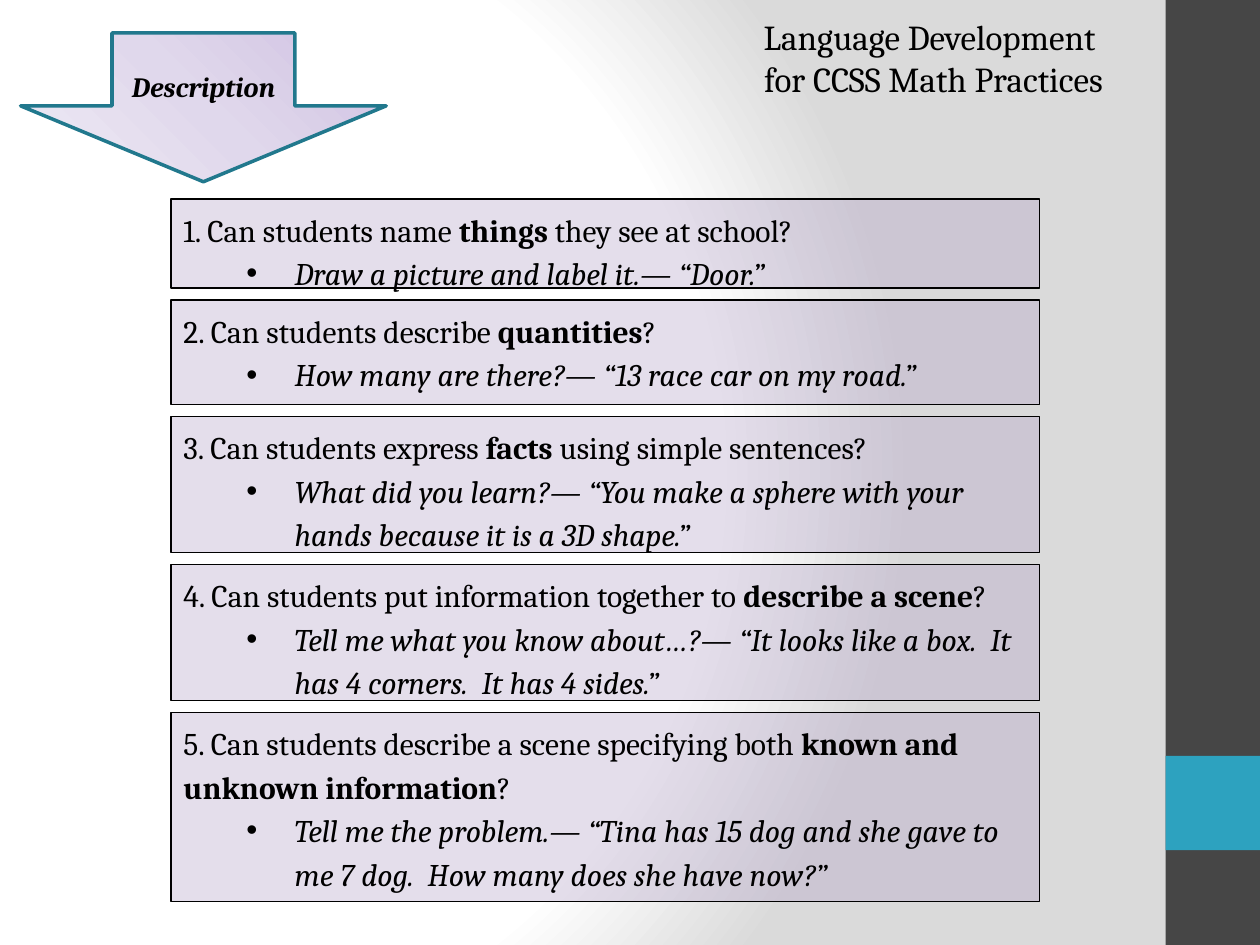
from dataclasses import dataclass

import lxml.etree
import pptx
import pptx.dml.color
import pptx.enum.shapes
import pptx.enum.text
import pptx.oxml
import pptx.oxml.ns
import pptx.util

Cm, Pt = pptx.util.Cm, pptx.util.Pt
Shape = pptx.enum.shapes.MSO_SHAPE
Align = pptx.enum.text.PP_ALIGN
qn = pptx.oxml.ns.qn


@dataclass(frozen=True)
class Theme:
    font: str = "Cambria"
    title_size: int = 20
    body_size: int = 18
    label_size: int = 16
    line_spacing: float = 1.15
    text: str = "000000"
    bar: str = "464646"
    accent: str = "2DA2BF"
    box_fill: str = "B2A1C7"
    box_opacity: int = 34
    arrow_line: str = "21788D"
    arrow_stops: tuple = ((0, "D0C1E2"), (50, "E0D8EC"), (100, "EFEBF5"))
    background_stops: tuple = ((0, "FFFFFF"), (75, "FFFFFF"), (100, "DADADA"))


# Each question: lead, bold key words, rest, example, box height in cm
QUESTIONS = [
    ("1. Can students name ", "things", " they see at school?",
     "Draw a picture and label it.— “Door.”", 1.8),
    ("2. Can students describe ", "quantities", "?",
     "How many are there?— “13 race car on my road.”", 2.11),
    ("3. Can students express ", "facts ", "using simple sentences?",
     "What did you learn?— “You make a sphere with your hands "
     "because it is a 3D shape.”", 2.74),
    ("4. Can students put information together to ", "describe a scene", "?",
     "Tell me what you know about…?— “It looks like a box.  "
     "It has 4 corners.  It has 4 sides.”", 2.74),
    ("5. Can students describe a scene specifying both ",
     "known and unknown information", "?",
     "Tell me the problem.— “Tina has 15 dog and she gave to me 7 dog.  "
     "How many does she have now?”", 3.81),
]
BOX_LEFT, BOX_TOP, BOX_WIDTH, BOX_GAP = 3.45, 4.01, 17.5, 0.24


def rgb(color):
    return pptx.dml.color.RGBColor.from_string(color)


def gradient(stops, direction):
    """Return a gradient fill element; direction is its a:lin or a:path XML."""
    marks = "".join(f'<a:gs pos="{position * 1000}"><a:srgbClr val="{color}"/></a:gs>'
                    for position, color in stops)
    return pptx.oxml.parse_xml(
        f'<a:gradFill {pptx.oxml.ns.nsdecls("a")} rotWithShape="1">'
        f"<a:gsLst>{marks}</a:gsLst>{direction}</a:gradFill>")


def add_text(para, text, *, theme, size, bold=False, italic=False):
    span = para.add_run()
    span.text = text
    span.font.size = Pt(size)
    span.font.name = theme.font
    span.font.color.rgb = rgb(theme.text)
    span.font.bold = bold
    span.font.italic = italic


class SlideBuilder:
    """Holds the theme and the slide that is being filled."""

    def __init__(self, theme, slide):
        self.theme = theme
        self.slide = slide

    def background(self):
        self.slide.background.fill.solid()
        properties = self.slide.element.find(".//" + qn("p:bgPr"))
        properties.replace(properties[0], gradient(
            self.theme.background_stops,
            '<a:path path="circle"><a:fillToRect l="20000" t="50000" '
            'r="100000" b="50000"/></a:path>'))

    def shape(self, kind, left, top, width, height, fill, line=None, line_width=0.75):
        shape = self.slide.shapes.add_shape(
            kind, Cm(left), Cm(top), Cm(width), Cm(height))
        shape.shadow.inherit = False
        shape.fill.solid()
        shape.fill.fore_color.rgb = rgb(fill)
        if line:
            shape.line.color.rgb = rgb(line)
            shape.line.width = Pt(line_width)
        else:
            shape.line.fill.background()
        return shape

    def title(self, lines, left, top, width, height):
        title = self.slide.shapes.title
        title.left, title.top = Cm(left), Cm(top)
        title.width, title.height = Cm(width), Cm(height)
        frame = title.text_frame
        frame.word_wrap = True
        frame.auto_size = pptx.enum.text.MSO_AUTO_SIZE.SHAPE_TO_FIT_TEXT
        frame.vertical_anchor = pptx.enum.text.MSO_ANCHOR.TOP
        para = frame.paragraphs[0]
        para.alignment = Align.CENTER
        for index, line in enumerate(lines):
            if index:
                para.add_line_break()
            add_text(para, line, theme=self.theme, size=self.theme.title_size)

    def down_arrow(self, left, top, width, height):
        """Draw a right arrow turned down; the frame given is the unturned one."""
        arrow = self.shape(Shape.RIGHT_ARROW, left, top, width, height,
                           self.theme.bar, self.theme.arrow_line, 2)
        arrow.rotation = 90
        arrow.adjustments[0], arrow.adjustments[1] = 0.5, 0.51
        properties = arrow.element.spPr
        properties.replace(
            properties.find(qn("a:solidFill")),
            gradient(self.theme.arrow_stops, '<a:lin ang="2700000" scaled="1"/>'))

    def label(self, text, left, top, width, height):
        box = self.slide.shapes.add_textbox(
            Cm(left), Cm(top), Cm(width), Cm(height))
        box.text_frame.word_wrap = True
        para = box.text_frame.paragraphs[0]
        para.alignment = Align.CENTER
        para.line_spacing = self.theme.line_spacing
        para.space_after = Pt(10)
        add_text(para, text, theme=self.theme, size=self.theme.label_size,
                 bold=True, italic=True)

    def question(self, lead, key, rest, example, top, height):
        theme = self.theme
        box = self.shape(Shape.RECTANGLE, BOX_LEFT, top, BOX_WIDTH, height,
                         theme.box_fill, theme.text)
        color = box.element.spPr.find(qn("a:solidFill"))[0]
        lxml.etree.SubElement(color, qn("a:alpha"), val=str(theme.box_opacity * 1000))
        frame = box.text_frame
        frame.word_wrap = True
        frame.vertical_anchor = pptx.enum.text.MSO_ANCHOR.TOP
        prompt, bullet = frame.paragraphs[0], frame.add_paragraph()
        for para in (prompt, bullet):
            para.alignment = Align.LEFT
            para.line_spacing = theme.line_spacing
        for text, bold in ((lead, False), (key, True), (rest, False)):
            add_text(prompt, text, theme=theme, size=theme.body_size, bold=bold)
        add_text(bullet, example, theme=theme, size=theme.body_size, italic=True)
        bullet.level = 1
        properties = bullet._p.get_or_add_pPr()
        properties.set("marL", str(Cm(2.24)))
        properties.set("indent", str(Cm(-0.97)))
        lxml.etree.SubElement(properties, qn("a:buFont"), typeface="Arial")
        lxml.etree.SubElement(properties, qn("a:buChar"), char="•")


def main():
    deck = pptx.Presentation()
    deck.slide_width, deck.slide_height = Cm(25.4), Cm(19.05)
    theme = Theme()
    page = SlideBuilder(theme, deck.slides.add_slide(deck.slide_layouts[5]))

    page.background()
    page.shape(Shape.RECTANGLE, 23.5, 0, 1.9, 19.05, theme.bar)
    page.shape(Shape.RECTANGLE, 23.5, 15.24, 1.9, 1.9, theme.accent)
    top = BOX_TOP
    for lead, key, rest, example, height in QUESTIONS:
        page.question(lead, key, rest, example, top, height)
        top += height + BOX_GAP
    page.down_arrow(2.6, -1.52, 3, 7.37)
    page.label("Description", 2.24, 1.17, 3.73, 1.32)
    page.title(["Language Development ", "for CCSS Math Practices"],
               14.45, 0.18, 8.74, 1.96)
    deck.save("out.pptx")


if __name__ == "__main__":
    main()
